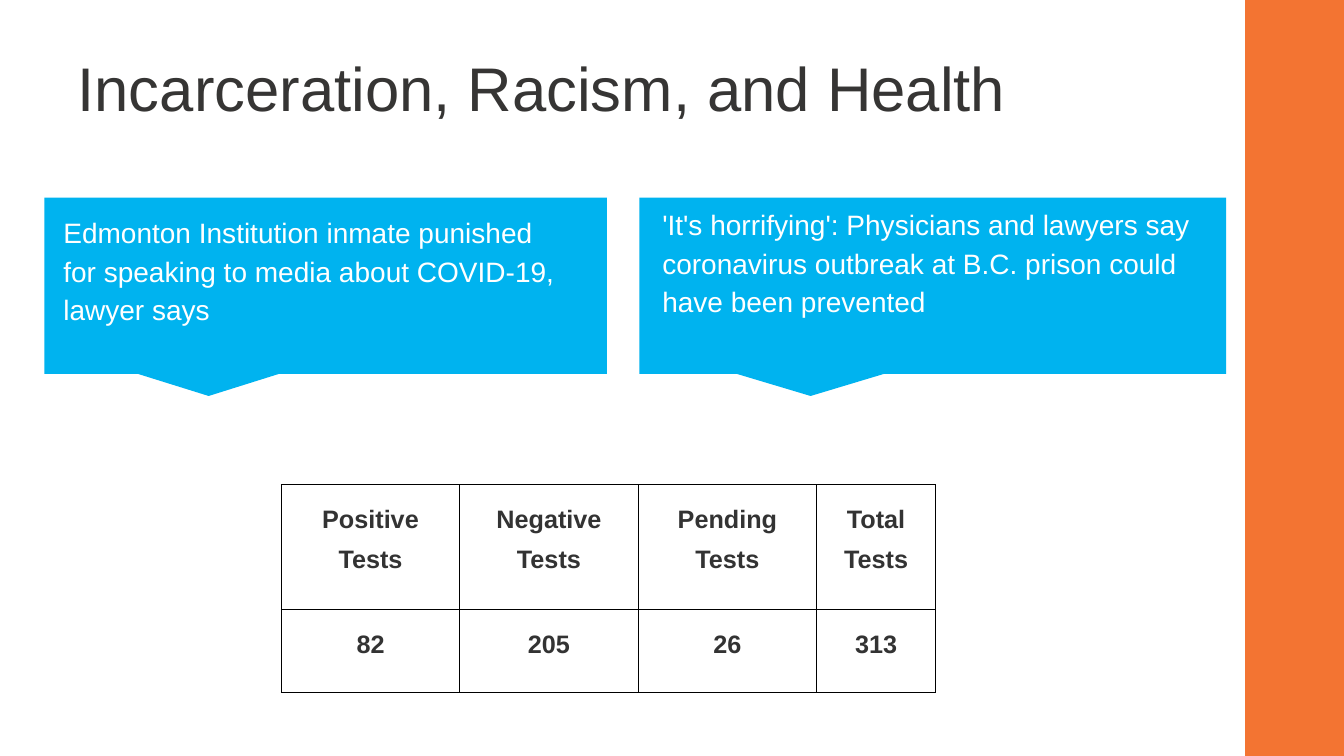
import pptx
import pptx.util
import pptx.dml.color
import pptx.enum.shapes
import pptx.enum.text
import pptx.oxml.ns
import lxml.etree
from dataclasses import dataclass

PX = 9144  # EMU per px, 100 px to the inch
ALIGN = pptx.enum.text.PP_ALIGN
ANCHOR = pptx.enum.text.MSO_ANCHOR
SHAPE = pptx.enum.shapes.MSO_SHAPE


@dataclass(frozen=True)
class Theme:
    font: str = "Arial"
    orange: str = "F37432"
    blue: str = "00B3EF"
    title_ink: str = "363534"
    table_ink: str = "333333"
    white: str = "FFFFFF"
    rule: str = "000000"
    title_size: int = 44
    body_size: int = 20
    table_size: int = 18


THEME = Theme()


def rgb(value):
    return pptx.dml.color.RGBColor.from_string(value)


def emu(*lengths):
    return [n * PX for n in lengths]


def write(tf, text, size, color, bold=False, align=ALIGN.LEFT, line=1.0, after=0):
    tf.word_wrap = True
    p = tf.paragraphs[0]
    p.alignment, p.line_spacing = align, line
    p.space_before, p.space_after = pptx.util.Pt(0), pptx.util.Pt(after)
    r = p.add_run()
    r.text = text
    r.font.name, r.font.size, r.font.bold = THEME.font, pptx.util.Pt(size), bold
    r.font.color.rgb = rgb(color)


def add_block(s, kind, box, color):
    sp = s.shapes.add_shape(kind, *emu(*box))
    sp.shadow.inherit = False
    sp.fill.solid()
    sp.fill.fore_color.rgb = rgb(color)
    sp.line.fill.background()
    return sp


def add_title(s, box, text):
    sp = s.shapes.title
    sp.left, sp.top, sp.width, sp.height = emu(*box)
    tf = sp.text_frame
    tf.auto_size = pptx.enum.text.MSO_AUTO_SIZE.NONE
    tf.vertical_anchor = ANCHOR.MIDDLE
    write(tf, text, THEME.title_size, THEME.title_ink, line=0.9)


def add_headline(s, box, inset, text):
    """Callout with a text box inset by left, top, right and bottom."""
    x, y, w, h = box
    left, top, right, bottom = inset
    callout = add_block(s, SHAPE.RECTANGULAR_CALLOUT, box, THEME.blue)
    callout.adjustments[0] = -0.208
    callout.adjustments[1] = 0.625
    text_box = (x + left, y + top, w - left - right, h - top - bottom)
    sp = s.shapes.add_textbox(*emu(*text_box))
    write(sp.text_frame, text, THEME.body_size, THEME.white, line=1.15)


def set_borders(cell):
    tc_pr = cell._tc.get_or_add_tcPr()
    for i, side in enumerate(("lnL", "lnR", "lnT", "lnB")):
        ln = lxml.etree.Element(pptx.oxml.ns.qn("a:" + side), w=str(pptx.util.Pt(0.75)))
        fill = lxml.etree.SubElement(ln, pptx.oxml.ns.qn("a:solidFill"))
        lxml.etree.SubElement(fill, pptx.oxml.ns.qn("a:srgbClr"), val=THEME.rule)
        tc_pr.insert(i, ln)


def add_results(s, box, rows, widths, heights):
    table = s.shapes.add_table(len(rows), len(widths), *emu(*box)).table
    table.first_row = table.horz_banding = False
    for column, width in zip(table.columns, widths):
        column.width = width * PX
    for row, height, values in zip(table.rows, heights, rows):
        row.height = height * PX
        for cell, value in zip(row.cells, values):
            cell.margin_left = cell.margin_right = 8 * PX
            cell.margin_top = cell.margin_bottom = 8 * PX
            cell.fill.background()
            set_borders(cell)
            write(cell.text_frame, value, THEME.table_size, THEME.table_ink,
                  bold=True, align=ALIGN.CENTER, line=1.44, after=17)


def build_slide(prs, box):
    x, y, w, h = box
    s = prs.slides.add_slide(prs.slide_layouts[5])

    # Side band
    band = 98
    add_block(s, SHAPE.RECTANGLE, (x + w - band, y, band, h), THEME.orange)

    # Title
    add_title(s, (x + 67, y + 30, 1125, 122), "Incarceration, Racism, and Health")

    # News headlines
    add_headline(s, (x + 44, y + 196, 558, 175), (9, 8, 26, 26),
                 "Edmonton Institution inmate punished for speaking to media "
                 "about COVID-19, lawyer says")
    add_headline(s, (x + 634, y + 196, 582, 175), (13, 0, 0, 18),
                 "'It's horrifying': Physicians and lawyers say coronavirus "
                 "outbreak at B.C. prison could have been prevented")

    # Test results
    rows = [("Positive Tests", "Negative Tests", "Pending Tests", "Total Tests"),
            ("82", "205", "26", "313")]
    add_results(s, (x + 279, y + 481, 649, 206), rows,
                widths=(177, 177, 177, 118), heights=(124, 82))


def main():
    prs = pptx.Presentation()
    width, height = 1333, 750
    prs.slide_width, prs.slide_height = emu(width, height)
    build_slide(prs, (0, 0, width, height))
    prs.save("out.pptx")


if __name__ == "__main__":
    main()
